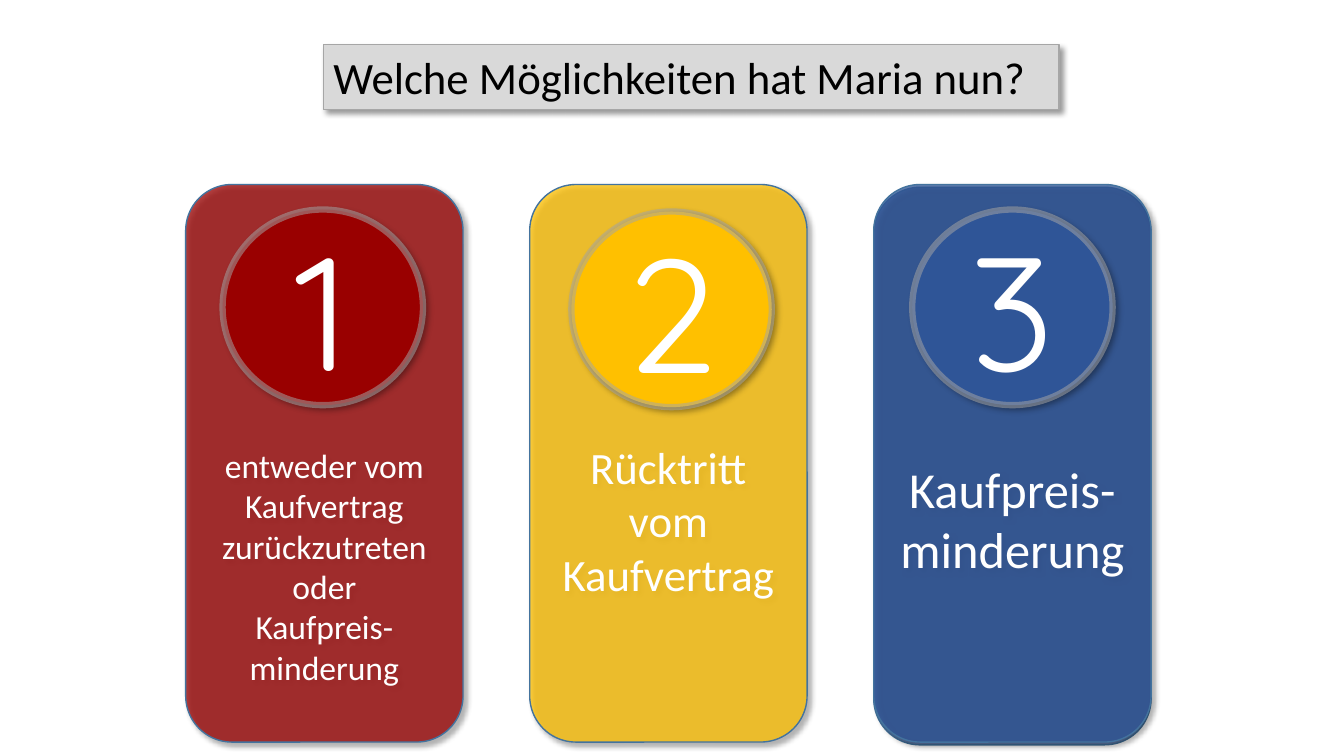
from lxml import etree
from pptx import Presentation
from pptx.dml.color import RGBColor
from pptx.enum.shapes import MSO_SHAPE
from pptx.enum.text import MSO_ANCHOR, MSO_AUTO_SIZE, PP_ALIGN
from pptx.oxml.ns import qn
from pptx.util import Cm, Pt

RECT, ROUNDED, OVAL = MSO_SHAPE.RECTANGLE, MSO_SHAPE.ROUNDED_RECTANGLE, MSO_SHAPE.OVAL
TOP, MIDDLE = MSO_ANCHOR.TOP, MSO_ANCHOR.MIDDLE
LEFT, CENTER = PP_ALIGN.LEFT, PP_ALIGN.CENTER
GROW = MSO_AUTO_SIZE.SHAPE_TO_FIT_TEXT

COLORS = {
    "red": "990000", "yellow": "FFC000", "blue": "2F5597",
    "panel_line": "43739E", "gray_line": "A6A6A6", "title_fill": "D9D9D9",
    "white": "FFFFFF", "black": "000000",
}

PANEL_LEFT, PANEL_TOP, PANEL_PITCH = 4.68, 4.65, 8.67
PANEL_W, PANEL_H = 6.99, 14.05
CIRCLE_W, CIRCLE_H = 5.05, 4.93

OPTIONS = [
    ("red", ["entweder vom Kaufvertrag zurückzutreten oder", "Kaufpreis-minderung"],
     24, 6.22, 5.61, 5.28),
    ("yellow", ["Rücktritt vom Kaufvertrag"], 32, 6.08, 14.4, 5.33),
    ("blue", ["Kaufpreis-minderung"], 36, 6.55, 22.99, 5.28),
]


def rgb(name):
    return RGBColor.from_string(COLORS[name])


def set_alpha(fill_parent, percent):
    color = fill_parent.find(qn("a:solidFill"))[0]
    etree.SubElement(color, qn("a:alpha"), val=str(percent * 1000))


def add_shadow(sp):
    effects = sp._element.spPr.find(qn("a:effectLst"))
    shadow = etree.SubElement(
        effects, qn("a:outerShdw"), blurRad=str(Pt(4)), dist=str(Pt(3)),
        dir="2700000", algn="tl", rotWithShape="0")
    color = etree.SubElement(shadow, qn("a:srgbClr"), val=COLORS["black"])
    etree.SubElement(color, qn("a:alpha"), val="40000")


def add_box(s, kind, box, fill, line, width, shadow=True):
    sp = s.shapes.add_shape(kind, *[Cm(v) for v in box])
    sp.fill.solid()
    sp.fill.fore_color.rgb = rgb(fill)
    sp.line.color.rgb = rgb(line)
    sp.line.width = Pt(width)
    sp.shadow.inherit = False
    if shadow:
        add_shadow(sp)
    return sp


def write(sp, lines, size, font="Calibri", color="white", align=CENTER, anchor=MIDDLE):
    tf = sp.text_frame
    tf.word_wrap = True
    tf.vertical_anchor = anchor
    tf.text = "\n".join(lines)
    for p in tf.paragraphs:
        p.alignment = align
        for r in p.runs:
            r.font.size = Pt(size)
            r.font.name = font
            r.font.color.rgb = rgb(color)


def add_panel(s, left, top, fill, shadow=True):
    sp = add_box(s, ROUNDED, (left, top, PANEL_W, PANEL_H), fill, "panel_line", 1, shadow)
    set_alpha(sp._element.spPr, 75)
    return sp


def add_circle(s, left, top, fill, number):
    sp = add_box(s, OVAL, (left, top, CIRCLE_W, CIRCLE_H), fill, "gray_line", 4.5)
    set_alpha(sp.line._get_or_add_ln(), 53)
    write(sp, [str(number)], 115, font="Quicksand")


def add_title(s, text):
    sp = add_box(s, RECT, (8.15, 1.13, 18.54, 1.64), "title_fill", "gray_line", 0.75)
    write(sp, [text], 32, color="black", align=LEFT, anchor=TOP)
    sp.text_frame.auto_size = GROW


def main():
    prs = Presentation()
    prs.slide_width, prs.slide_height = Cm(33.87), Cm(19.05)
    s = prs.slides.add_slide(prs.slide_layouts[6])

    add_panel(s, PANEL_LEFT + 2 * PANEL_PITCH, PANEL_TOP + 0.07, "blue", shadow=False)
    for i, (fill, lines, size, inset, circle_left, circle_top) in enumerate(OPTIONS):
        panel = add_panel(s, PANEL_LEFT + i * PANEL_PITCH, PANEL_TOP, fill)
        write(panel, lines, size, anchor=TOP)
        panel.text_frame.margin_top = Cm(inset)
        add_circle(s, circle_left, circle_top, fill, i + 1)
    add_title(s, "Welche Möglichkeiten hat Maria nun?")

    prs.save("out.pptx")


if __name__ == "__main__":
    main()
